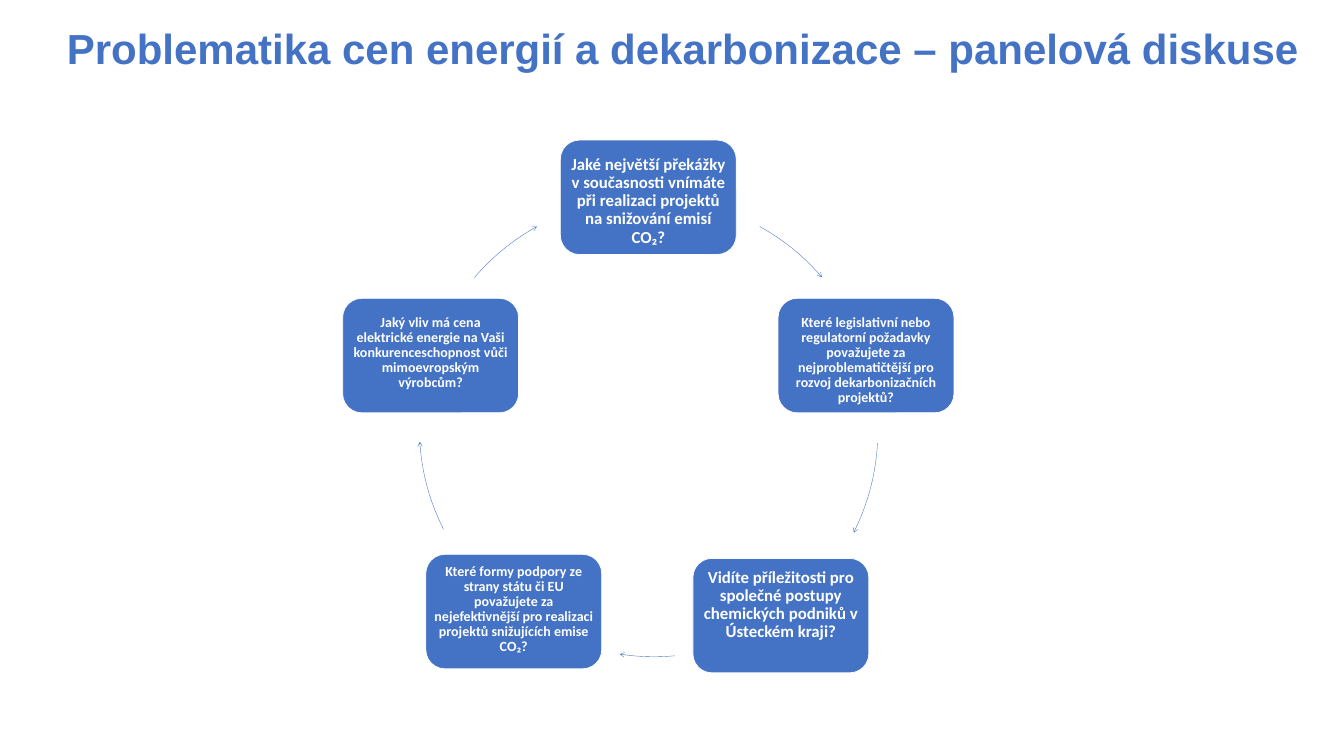
from lxml import etree
from pptx import Presentation
from pptx.dml.color import RGBColor
from pptx.enum.shapes import MSO_SHAPE
from pptx.enum.text import MSO_ANCHOR, PP_ALIGN
from pptx.oxml.ns import qn
from pptx.util import Inches, Pt

ROUNDED = MSO_SHAPE.ROUNDED_RECTANGLE
ARC = MSO_SHAPE.ARC
MIDDLE = MSO_ANCHOR.MIDDLE
CENTER = PP_ALIGN.CENTER

BLUE = "4472C4"
WHITE = "FFFFFF"
CARD_WIDTH, CARD_HEIGHT = 3.49, 2.27
CYCLE_DIAMETER = 9.09
ARC_UNITS_PER_DEGREE = 0.6

TITLE = "Problematika cen energií a dekarbonizace – panelová diskuse"

# left, top, size, side inset, top inset, bottom inset, question
QUESTIONS = [
    (11.12, 2.78, 24, 0.1, 0.16, 0,
     "Jaké největší překážky v současnosti vnímáte při realizaci projektů "
     "na snižování emisí CO₂?"),
    (15.44, 5.92, 20, 0.1, 0.2, 0,
     "Které legislativní nebo regulatorní požadavky považujete za "
     "nejproblematičtější pro rozvoj dekarbonizačních projektů?"),
    (13.75, 11.08, 24, 0.1, 0, 0.42,
     "Vidíte příležitosti pro společné postupy chemických podniků v "
     "Ústeckém kraji?"),
    (8.45, 11, 20, 0.05, 0, 0.08,
     "Které formy podpory ze strany státu či EU považujete za "
     "nejefektivnější pro realizaci projektů snižujících emise CO₂?"),
    (6.8, 5.92, 20, 0.05, 0, 0.1,
     "Jaký vliv má cena elektrické energie na Vaši konkurenceschopnost "
     "vůči mimoevropským výrobcům?"),
]

CYCLE_ARROWS = [
    (8.32, 3.92, 299.1, 319.3),
    (8.33, 3.99, 3.2, 26.6),
    (8.44, 3.94, 84.9, 98.7),
    (8.32, 3.92, 153.4, 176.2),
    (8.32, 3.92, 220.6, 240.9),
]


def color(hex_value):
    return RGBColor.from_string(hex_value)


def write_text(frame, text, font_name, size, hex_value):
    frame.text = text
    frame.word_wrap = True
    frame.vertical_anchor = MIDDLE
    paragraph = frame.paragraphs[0]
    paragraph.alignment = CENTER
    paragraph.line_spacing = 0.9
    font = paragraph.runs[0].font
    font.name = font_name
    font.size = Pt(size)
    font.bold = True
    font.color.rgb = color(hex_value)


def add_title(slide):
    title = slide.shapes.title
    title.left, title.top = Inches(0.45), Inches(0.25)
    title.width, title.height = Inches(26.21), Inches(1.51)
    write_text(title.text_frame, TITLE, "Arial", 60, BLUE)


def add_question(slide, left, top, size, side, inset_top, inset_bottom, text):
    card = slide.shapes.add_shape(
        ROUNDED, Inches(left), Inches(top),
        Inches(CARD_WIDTH), Inches(CARD_HEIGHT))
    card.shadow.inherit = False
    card.fill.solid()
    card.fill.fore_color.rgb = color(BLUE)
    card.line.color.rgb = color(WHITE)
    card.line.width = Pt(1)
    frame = card.text_frame
    frame.margin_left = frame.margin_right = Inches(side)
    frame.margin_top = Inches(inset_top)
    frame.margin_bottom = Inches(inset_bottom)
    write_text(frame, text, "Calibri", size, WHITE)


def add_cycle_arrow(slide, left, top, start, end):
    arrow = slide.shapes.add_shape(
        ARC, Inches(left), Inches(top),
        Inches(CYCLE_DIAMETER), Inches(CYCLE_DIAMETER))
    arrow.adjustments[0] = start * ARC_UNITS_PER_DEGREE
    arrow.adjustments[1] = end * ARC_UNITS_PER_DEGREE
    arrow.shadow.inherit = False
    arrow.fill.background()
    arrow.line.color.rgb = color(BLUE)
    arrow.line.width = Pt(0.5)
    outline = arrow.element.spPr.find(qn("a:ln"))
    etree.SubElement(outline, qn("a:tailEnd"), type="arrow")


def main():
    presentation = Presentation()
    presentation.slide_width = Inches(26.67)
    presentation.slide_height = Inches(15)
    slide = presentation.slides.add_slide(presentation.slide_layouts[5])
    add_title(slide)
    for question, arrow in zip(QUESTIONS, CYCLE_ARROWS):
        add_question(slide, *question)
        add_cycle_arrow(slide, *arrow)
    presentation.save("out.pptx")


if __name__ == "__main__":
    main()
